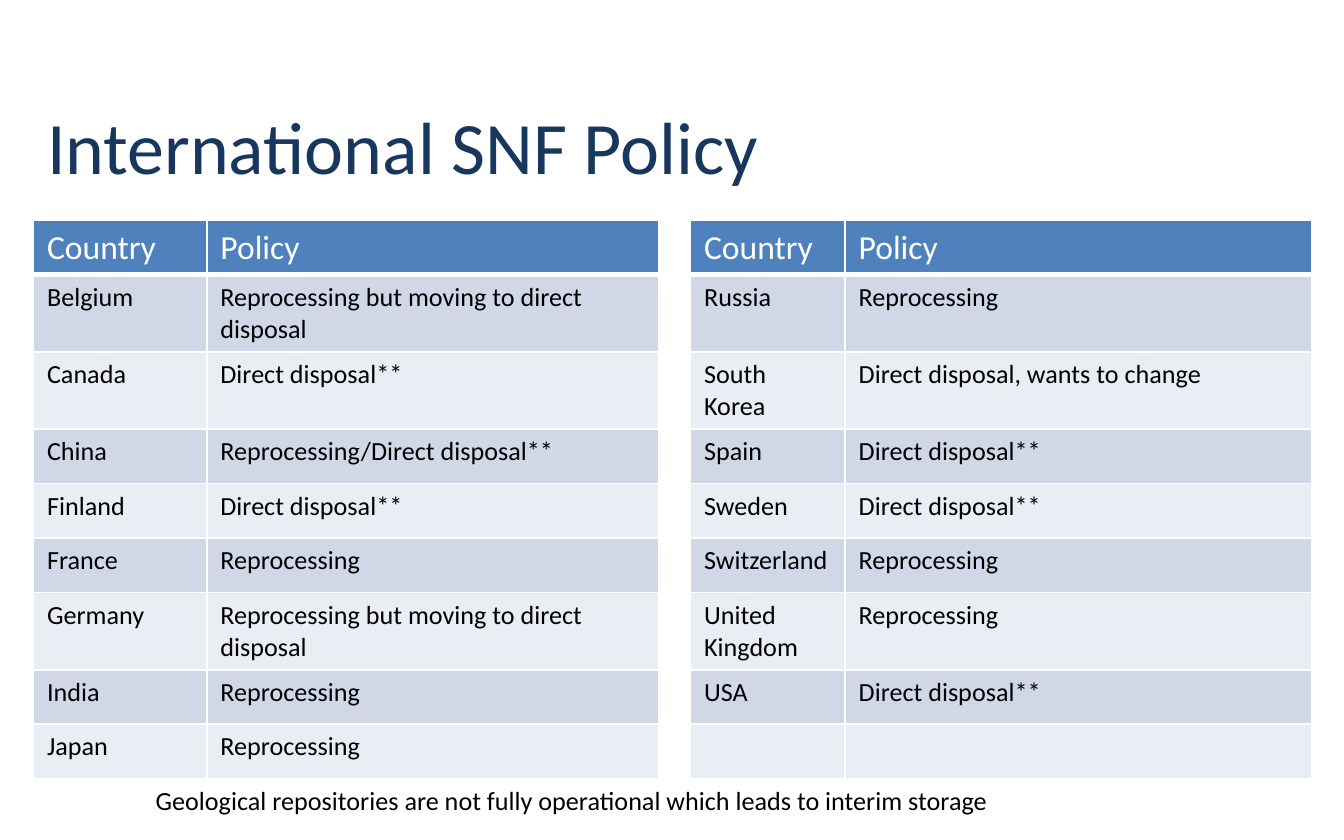
from lxml.etree import SubElement
from pptx import Presentation
from pptx.dml.color import RGBColor
from pptx.enum.text import MSO_ANCHOR as Anchor, MSO_AUTO_SIZE as AutoSize, PP_ALIGN as Align
from pptx.oxml.ns import qn
from pptx.util import Inches, Pt

WIDTH, HEIGHT = Inches(10), Inches(6.25)
FONT = "Calibri"
NAVY = RGBColor(0x17, 0x37, 0x5E)
BLUE = RGBColor(0x4F, 0x81, 0xBD)
BAND_DARK = RGBColor(0xD0, 0xD8, 0xE8)
BAND_LIGHT = RGBColor(0xE9, 0xED, 0xF4)
WHITE = RGBColor(0xFF, 0xFF, 0xFF)
BLACK = RGBColor(0x00, 0x00, 0x00)

COLUMN_SHARES = (12.9, 33.6, 2.3, 11.5, 34.7)
ROW_SHARE = 6.49
GAP_COLUMN = 2
HEADER = ("Country", "Policy", "", "Country", "Policy")
POLICIES = (
    ("Belgium", "Reprocessing but moving to direct disposal", "", "Russia", "Reprocessing"),
    ("Canada", "Direct disposal**", "", "South Korea", "Direct disposal, wants to change"),
    ("China", "Reprocessing/Direct disposal**", "", "Spain", "Direct disposal**"),
    ("Finland", "Direct disposal**", "", "Sweden", "Direct disposal**"),
    ("France", "Reprocessing", "", "Switzerland", "Reprocessing"),
    ("Germany", "Reprocessing but moving to direct disposal", "", "United Kingdom", "Reprocessing"),
    ("India", "Reprocessing", "", "USA", "Direct disposal**"),
    ("Japan", "Reprocessing", "", "", ""),
)


def across(share):
    """Return a percentage of the slide width."""
    return round(WIDTH * share / 100)


def down(share):
    """Return a percentage of the slide height."""
    return round(HEIGHT * share / 100)


def add_span(para, text, size, color):
    """Add one formatted run to a paragraph."""
    span = para.add_run()
    span.text = text
    span.font.name = FONT
    span.font.size = Pt(size)
    span.font.bold = False
    span.font.color.rgb = color


def add_title(page, text):
    """Place and fill the title placeholder."""
    title = page.shapes.title
    title.left, title.top = across(2.5), down(10.72)
    title.width, title.height = across(95), down(13.12)
    frame = title.text_frame
    frame.vertical_anchor = Anchor.MIDDLE
    para = frame.paragraphs[0]
    para.alignment = Align.LEFT
    add_span(para, text, 39.6, NAVY)


def add_borders(cell, bottom):
    """Draw white borders around a cell, with the given bottom width."""
    properties = cell._tc.get_or_add_tcPr()
    for side, width in (("L", 1), ("R", 1), ("T", 1), ("B", bottom)):
        line = SubElement(properties, qn(f"a:ln{side}"), w=str(Pt(width)))
        fill = SubElement(line, qn("a:solidFill"))
        SubElement(fill, qn("a:srgbClr"), val=str(WHITE))


def fill_row(table, row, texts, fill, size, color, bottom=1):
    """Write and colour one row, leaving the gap column clear."""
    for column, text in enumerate(texts):
        cell = table.cell(row, column)
        if column == GAP_COLUMN:
            cell.fill.background()
            continue
        add_borders(cell, bottom)
        cell.fill.solid()
        cell.fill.fore_color.rgb = fill
        if text:
            add_span(cell.text_frame.paragraphs[0], text, size, color)


def add_policy_table(page):
    """Add the two country lists as one table with a gap column."""
    rows = len(POLICIES) + 1
    table = page.shapes.add_table(
        rows, len(HEADER), across(2.5), down(26.24),
        across(sum(COLUMN_SHARES)), down(ROW_SHARE * rows)).table
    for column, share in zip(table.columns, COLUMN_SHARES):
        column.width = across(share)
    for row in table.rows:
        row.height = down(ROW_SHARE)
    fill_row(table, 0, HEADER, BLUE, 18, WHITE, bottom=3)
    for index, texts in enumerate(POLICIES, start=1):
        band = BAND_DARK if index % 2 else BAND_LIGHT
        fill_row(table, index, texts, band, 14, BLACK)


def add_note(page, text):
    """Add the closing remark below the table."""
    box = page.shapes.add_textbox(across(10.6), down(92.64), across(67.6), down(5.44))
    frame = box.text_frame
    frame.word_wrap = True
    frame.auto_size = AutoSize.SHAPE_TO_FIT_TEXT
    add_span(frame.paragraphs[0], text, 14, BLACK)


def main():
    """Build the slide and save the deck."""
    deck = Presentation()
    deck.slide_width, deck.slide_height = WIDTH, HEIGHT
    page = deck.slides.add_slide(deck.slide_layouts.get_by_name("Title Only"))
    add_title(page, "International SNF Policy")
    add_policy_table(page)
    add_note(page, "Geological repositories are not fully operational which leads to interim storage")
    deck.save("out.pptx")


if __name__ == "__main__":
    main()
